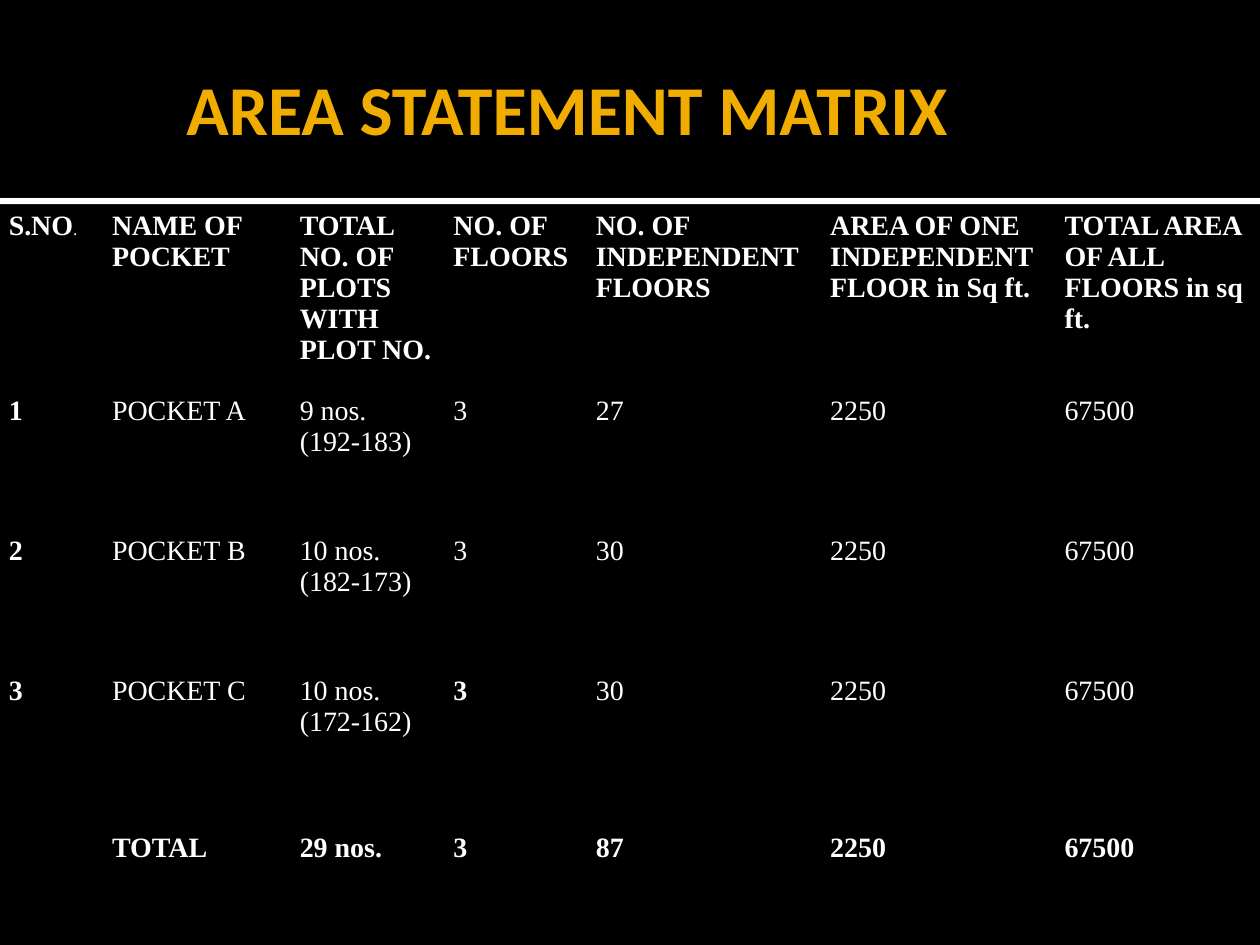
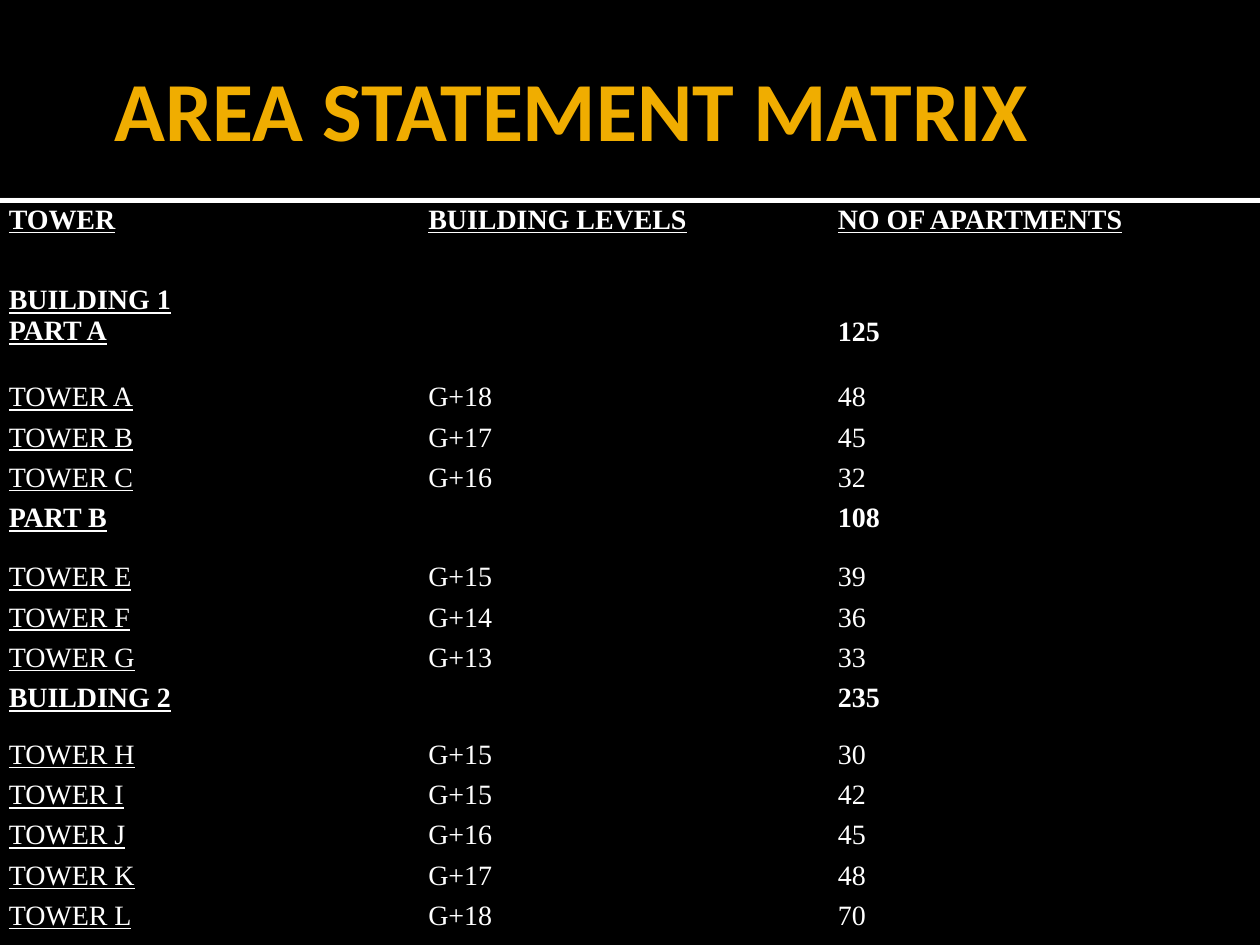
import pptx
import pptx.dml.color
import pptx.enum.shapes
import pptx.enum.text
import pptx.oxml
import pptx.oxml.ns
import pptx.util

PX = 9144  # 100 px to the inch
BLACK = pptx.dml.color.RGBColor(0x00, 0x00, 0x00)
WHITE = pptx.dml.color.RGBColor(0xFF, 0xFF, 0xFF)
GOLD = pptx.dml.color.RGBColor(0xF0, 0xAD, 0x00)
SERIF = "Times New Roman"
RECT = pptx.enum.shapes.MSO_SHAPE.RECTANGLE
EDGE = ('<a:{} w="12700" %s><a:solidFill><a:srgbClr val="000000"/></a:solidFill></a:{}>'
        % pptx.oxml.ns.nsdecls("a"))


def write(para, text, size=16, bold=False, line=False, face=SERIF, color=WHITE):
    run = para.add_run()
    run.text = text
    font = run.font
    font.size = pptx.util.Pt(size)
    font.bold = bold
    font.underline = line
    font.name = face
    font.color.rgb = color


def grid(slide, top, cols, rows, data):
    """Add a bare table with thin black borders and return it."""
    table = slide.shapes.add_table(len(rows), len(cols), 0, top * PX,
                                   sum(cols) * PX, sum(rows) * PX).table
    table.first_row = table.horz_banding = False
    for col, width in zip(table.columns, cols):
        col.width = width * PX
    for row, height, texts in zip(table.rows, rows, data):
        row.height = height * PX
        for cell, text in zip(row.cells, texts):
            cell.margin_left = cell.margin_right = 7 * PX
            cell.margin_top = cell.margin_bottom = 0
            props = cell._tc.get_or_add_tcPr()
            for side in ("lnL", "lnR", "lnT", "lnB"):
                props.append(pptx.oxml.parse_xml(EDGE.format(side, side)))
            cell.fill.background()
            # Plain first column and totals are marked in bold by row
            bold = texts in heads or (text == texts[0] and text.isdigit())
            under = slide is towers and (text == texts[0] or texts is data[0])
            for n, part in enumerate(text.split("\n") if text else []):
                frame = cell.text_frame
                para = frame.add_paragraph() if n else frame.paragraphs[0]
                write(para, part, bold=bold, line=under)
    return table


deck = pptx.Presentation()
deck.slide_width = 1000 * PX
deck.slide_height = 750 * PX

# Shared background, bands and title
slides = []
for indent, size in ((98, 40), (41, 48)):
    slide = deck.slides.add_slide(deck.slide_layouts[6])
    slides.append(slide)
    slide.background.fill.solid()
    slide.background.fill.fore_color.rgb = BLACK
    for top, height, color in ((157, 5, WHITE), (0, 157, BLACK)):
        band = slide.shapes.add_shape(RECT, 0, top * PX, 1000 * PX, height * PX)
        band.shadow.inherit = False
        band.fill.solid()
        band.fill.fore_color.rgb = color
        band.line.fill.background()
    frame = slide.shapes.add_textbox(50 * PX, 17 * PX, 900 * PX, 137 * PX).text_frame
    frame.word_wrap = True
    frame.vertical_anchor = pptx.enum.text.MSO_ANCHOR.MIDDLE
    frame.margin_left = indent * PX
    frame.margin_right = frame.margin_top = frame.margin_bottom = 5 * PX
    write(frame.paragraphs[0], "AREA STATEMENT MATRIX", size=size, bold=True,
          face="Calibri", color=GOLD)
pockets, towers = slides

# Slide 1: pockets
plots = [
    ("S.NO", "NAME OF POCKET", "TOTAL NO. OF PLOTS WITH PLOT NO.", "NO. OF FLOORS",
     "NO. OF INDEPENDENT FLOORS", "AREA OF ONE INDEPENDENT FLOOR in Sq ft.",
     "TOTAL AREA OF ALL FLOORS in sq ft."),
    ("1", "POCKET A", "9 nos.\n(192-183)", "3", "27", "2250", "67500"),
    ("2", "POCKET B", "10 nos.\n(182-173)", "3", "30", "2250", "67500"),
    ("3", "POCKET C", "10 nos.\n(172-162)", "3", "30", "2250", "67500"),
    ("", "TOTAL", "29 nos.", "3", "87", "2250", "67500"),
]
heads = [plots[0], plots[-1]]
table = grid(pockets, 167, (82, 149, 122, 113, 186, 186, 161),
             (147, 111, 111, 125, 89), plots)
write(table.cell(0, 0).text_frame.paragraphs[0], ".", size=10)

# Slide 2: towers
flats = [
    ("TOWER", "BUILDING LEVELS", "NO OF APARTMENTS"),
    ("BUILDING 1\nPART A", "", "125"),
    ("TOWER A", "G+18", "48"),
    ("TOWER B", "G+17", "45"),
    ("TOWER C", "G+16", "32"),
    ("PART B", "", "108"),
    ("TOWER E", "G+15", "39"),
    ("TOWER F", "G+14", "36"),
    ("TOWER G", "G+13", "33"),
    ("BUILDING 2", "", "235"),
    ("TOWER H", "G+15", "30"),
    ("TOWER I", "G+15", "42"),
    ("TOWER J", "G+16", "45"),
    ("TOWER K", "G+17", "48"),
    ("TOWER L", "G+18", "70"),
]
heads = [row for row in flats if row is flats[0] or not row[1]]
tall = {0: 64, 1: 77, 5: 47, 9: 45}
table = grid(towers, 162, (333, 325, 342),
             [tall.get(n, 32) for n in range(len(flats))], flats)
# Level the count with the second line, PART A
table.cell(1, 2).margin_top = 25 * PX

deck.save("out.pptx")
